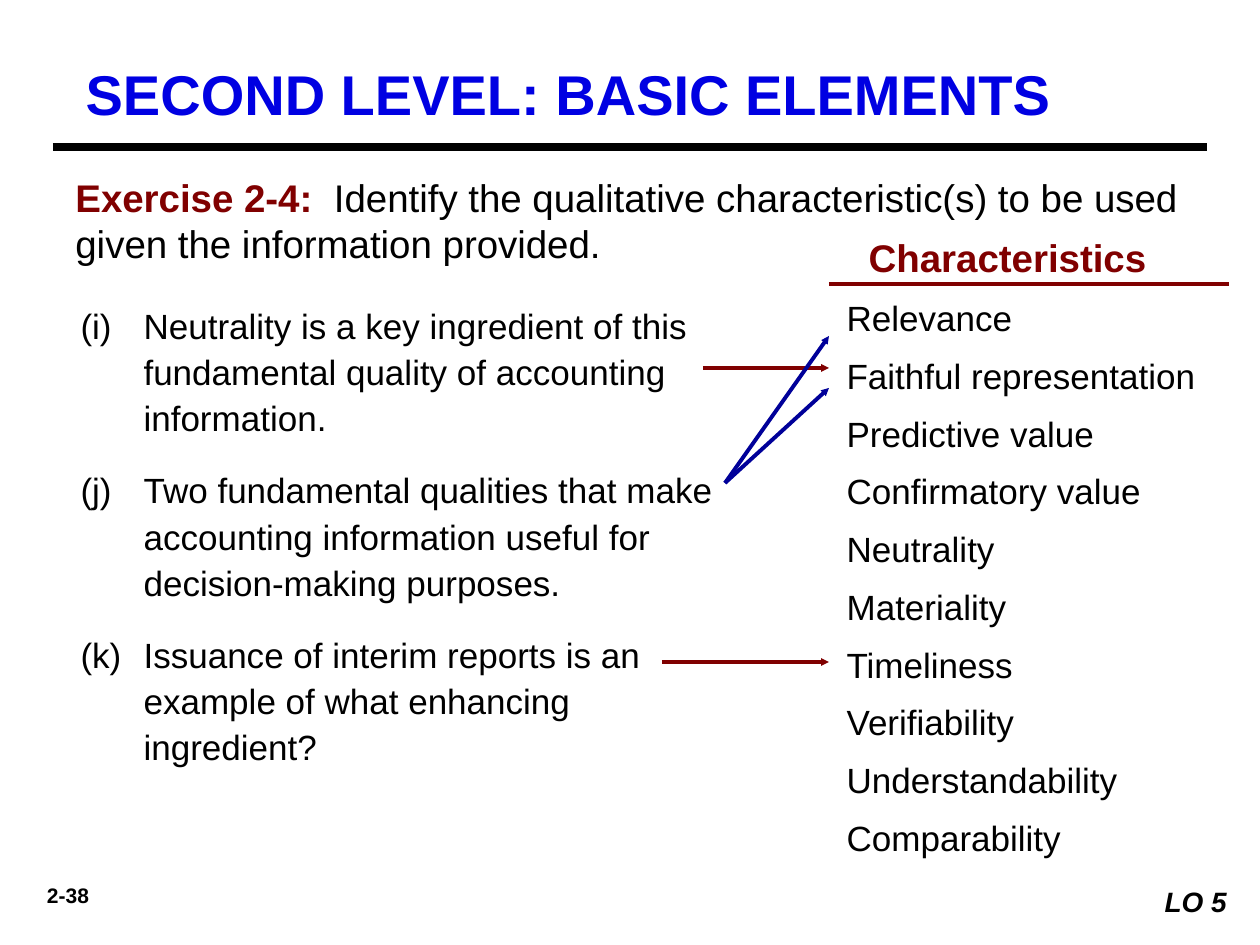
import dataclasses
import typing

import lxml.etree
import pptx
import pptx.dml.color
import pptx.enum.shapes
import pptx.enum.text
import pptx.oxml.ns
import pptx.util

PX_PER_INCH = 126
ALIGN = pptx.enum.text.PP_ALIGN
ANCHOR = pptx.enum.text.MSO_ANCHOR


@dataclasses.dataclass(frozen=True)
class Theme:
    font: str = "Arial"
    black: str = "000000"
    white: str = "FFFFFF"
    maroon: str = "800000"
    navy: str = "000099"
    title_blue: str = "0000E2"
    title: int = 32
    lead: int = 22
    body: int = 20
    objective: int = 16
    number: int = 12
    line: float = 2.25
    title_line: float = 4.5


THEME = Theme()


class Box(typing.NamedTuple):
    left: int
    top: int
    width: int
    height: int


class Span(typing.NamedTuple):
    text: str
    size: int
    color: str = THEME.black
    bold: bool = False
    italic: bool = False


class Line(typing.NamedTuple):
    start: tuple[int, int]
    end: tuple[int, int]
    color: str
    width: float = THEME.line
    arrow: bool = False


class ListStyle(typing.NamedTuple):
    line_spacing: float
    space_after: float
    first_number: int | None = None


EXERCISE = [
    Span("Exercise 2-4:", THEME.lead, THEME.maroon, bold=True),
    Span("  Identify the qualitative characteristic(s) to be used given the information provided.",
         THEME.lead),
]
QUESTIONS = [
    "Neutrality is a key ingredient of this fundamental quality of accounting information.",
    "Two fundamental qualities that make accounting information useful for decision-making purposes.",
    "Issuance of interim reports is an example of what enhancing ingredient?",
]
CHARACTERISTICS = [
    "Relevance", "Faithful representation", "Predictive value", "Confirmatory value",
    "Neutrality", "Materiality", "Timeliness", "Verifiability", "Understandability",
    "Comparability",
]
LINES = [
    Line((53, 147), (1207, 147), THEME.black, THEME.title_line),
    Line((829, 284), (1229, 284), THEME.maroon),
    Line((703, 368), (829, 368), THEME.maroon, arrow=True),
    Line((725, 483), (829, 336), THEME.navy, arrow=True),
    Line((662, 662), (829, 662), THEME.maroon, arrow=True),
    Line((725, 483), (829, 388), THEME.navy, arrow=True),
]


def px(length: int) -> int:
    return pptx.util.Emu(round(length * 914400 / PX_PER_INCH))


def rgb(color: str) -> pptx.dml.color.RGBColor:
    return pptx.dml.color.RGBColor.from_string(color)


def add_child(parent, tag: str, **attributes: str) -> None:
    lxml.etree.SubElement(parent, pptx.oxml.ns.qn(tag), attributes)


def place(shape, box: Box) -> None:
    shape.left, shape.top, shape.width, shape.height = map(px, box)


def prepare_frame(shape, anchor=ANCHOR.TOP, wrap: bool = True):
    frame = shape.text_frame
    frame.auto_size = pptx.enum.text.MSO_AUTO_SIZE.NONE
    frame.word_wrap = wrap
    frame.vertical_anchor = anchor
    return frame


def write_spans(para, spans: list[Span], align=ALIGN.LEFT) -> None:
    para.alignment = align
    para.space_before = pptx.util.Pt(0)
    for span in spans:
        run = para.add_run()
        run.text = span.text
        run.font.name = THEME.font
        run.font.size = pptx.util.Pt(span.size)
        run.font.color.rgb = rgb(span.color)
        run.font.bold = span.bold
        run.font.italic = span.italic


def add_text(slide, box: Box, spans: list[Span], align=ALIGN.LEFT,
             anchor=ANCHOR.TOP, wrap: bool = True) -> None:
    shape = slide.shapes.add_textbox(*map(px, box))
    write_spans(prepare_frame(shape, anchor, wrap).paragraphs[0], spans, align)


def fill_list(placeholder, box: Box, items: list[str], style: ListStyle) -> None:
    """Move a body placeholder and fill it with hanging-indent paragraphs."""
    place(placeholder, box)
    frame = prepare_frame(placeholder)
    for index, item in enumerate(items):
        para = frame.add_paragraph() if index else frame.paragraphs[0]
        write_spans(para, [Span(item, THEME.body)])
        para.line_spacing = style.line_spacing
        para.space_after = pptx.util.Pt(style.space_after)
        properties = para._p.get_or_add_pPr()
        properties.set("marL", str(px(78)))
        properties.set("indent", str(px(-63)))
        if style.first_number is None:
            properties.set("indent", str(px(-63)))
            add_child(properties, "a:buNone")
        else:
            add_child(properties, "a:buFont", typeface=THEME.font)
            add_child(properties, "a:buAutoNum", type="alphaLcParenBoth",
                      startAt=str(style.first_number))


def draw_line(slide, line: Line) -> None:
    connector = slide.shapes.add_connector(
        pptx.enum.shapes.MSO_CONNECTOR.STRAIGHT, *map(px, line.start + line.end))
    connector.line.color.rgb = rgb(line.color)
    connector.line.width = pptx.util.Pt(line.width)
    if line.arrow:
        add_child(connector.line._get_or_add_ln(), "a:tailEnd",
                  type="triangle", w="sm", len="sm")
    add_child(connector._element.spPr, "a:effectLst")


def add_objective(slide, box: Box, text: str) -> None:
    shape = slide.shapes.add_shape(pptx.enum.shapes.MSO_SHAPE.RECTANGLE, *map(px, box))
    shape.shadow.inherit = False
    shape.fill.solid()
    shape.fill.fore_color.rgb = rgb(THEME.white)
    shape.line.fill.background()
    span = Span(text, THEME.objective, bold=True, italic=True)
    write_spans(prepare_frame(shape).paragraphs[0], [span], ALIGN.RIGHT)


def main() -> None:
    deck = pptx.Presentation()
    deck.slide_width, deck.slide_height = px(1260), px(945)
    slide = deck.slides.add_slide(deck.slide_layouts.get_by_name("Two Content"))
    title, questions, characteristics = slide.placeholders

    place(title, Box(73, 53, 1134, 77))
    heading = Span("SECOND LEVEL: BASIC ELEMENTS", THEME.title, THEME.title_blue, bold=True)
    write_spans(prepare_frame(title).paragraphs[0], [heading])

    add_text(slide, Box(63, 168, 1176, 105), EXERCISE)
    fill_list(questions, Box(53, 294, 703, 489), QUESTIONS, ListStyle(1.1, 14.8, 9))
    add_text(slide, Box(829, 231, 357, 53),
             [Span("Characteristics", THEME.lead, THEME.maroon, bold=True)],
             ALIGN.CENTER, ANCHOR.MIDDLE, wrap=False)
    fill_list(characteristics, Box(819, 282, 410, 599), CHARACTERISTICS, ListStyle(1.2, 4.2))
    for line in LINES:
        draw_line(slide, line)

    add_text(slide, Box(10, 876, 116, 38), [Span("2-38", THEME.number, bold=True)], ALIGN.CENTER)
    add_objective(slide, Box(1081, 878, 158, 47), "LO 5")
    deck.save("out.pptx")


if __name__ == "__main__":
    main()
